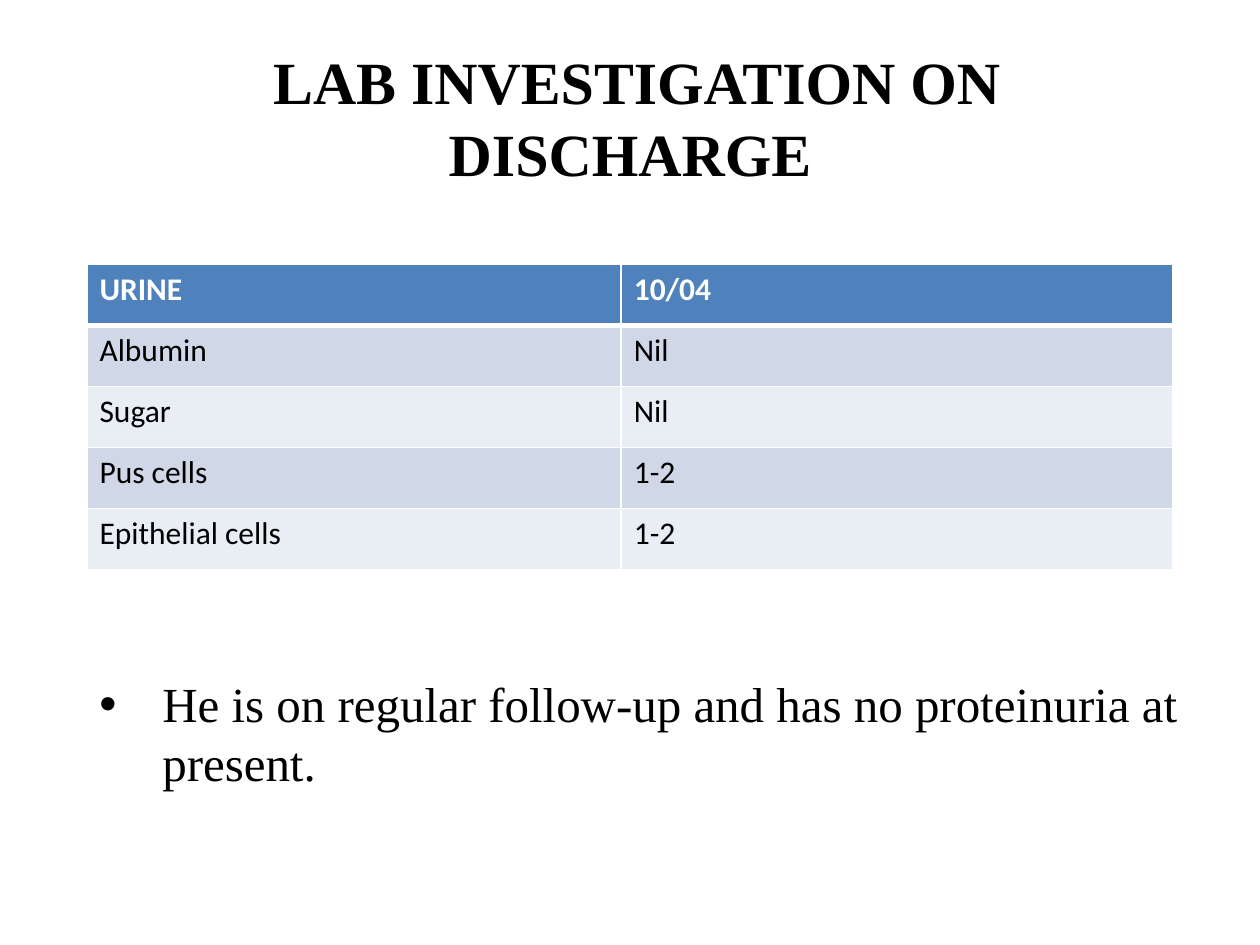
from lxml.etree import SubElement
from pptx import Presentation
from pptx.dml.color import RGBColor
from pptx.enum.text import MSO_ANCHOR as Anchor, PP_ALIGN as Align
from pptx.oxml.ns import qn
from pptx.util import Pt


def color(hex_text):
    return RGBColor.from_string(hex_text)


def add_span(para, text, **format_values):
    span = para.add_run()
    span.text = text
    span.font.color.rgb = color(format_values.pop("ink", "000000"))
    for name, value in format_values.items():
        setattr(span.font, name, value)


deck = Presentation()
deck.slide_width, deck.slide_height = Pt(720), Pt(540)
page = deck.slides.add_slide(deck.slide_layouts[6])

# Title
title_box = page.shapes.add_textbox(Pt(36), Pt(21.6), Pt(648), Pt(90))
title_frame = title_box.text_frame
title_frame.word_wrap = True
title_frame.vertical_anchor = Anchor.MIDDLE
title = title_frame.paragraphs[0]
title.alignment = Align.CENTER
title_size = Pt(34.2)
add_span(title, " ", name="Calibri", size=title_size)
add_span(title, "LAB INVESTIGATION ON DISCHARGE",
         name="Times New Roman", size=title_size, bold=True)

# Urine results
results = [
    ("URINE", "10/04"),
    ("Albumin", "Nil"),
    ("Sugar", "Nil"),
    ("Pus cells", "1-2"),
    ("Epithelial cells", "1-2"),
]
column_widths = [305.3, 315.3]
row_height = 34.85
header_fill, band_fills = "4F81BD", ["E9EDF4", "D0D8E8"]
table = page.shapes.add_table(
    len(results), len(column_widths), Pt(49.7), Pt(151.2),
    Pt(sum(column_widths)), Pt(row_height * len(results))).table
for column, width in zip(table.columns, column_widths):
    column.width = Pt(width)
for row in table.rows:
    row.height = Pt(row_height)

for row_index, texts in enumerate(results):
    is_header = row_index == 0
    for column_index, text in enumerate(texts):
        cell = table.cell(row_index, column_index)
        margins = {"margin_left": 7.2, "margin_right": 7.2,
                   "margin_top": 3.6, "margin_bottom": 3.6}
        for name, value in margins.items():
            setattr(cell, name, Pt(value))
        add_span(cell.text_frame.paragraphs[0], text, name="Calibri",
                 size=Pt(18), bold=is_header,
                 ink="FFFFFF" if is_header else "000000")

        # Borders come before the fill in the cell properties
        border_widths = {"a:lnL": 1, "a:lnR": 1,
                         "a:lnT": 3 if row_index == 1 else 1,
                         "a:lnB": 3 if is_header else 1}
        properties = cell._tc.get_or_add_tcPr()
        for tag, width in border_widths.items():
            line = SubElement(properties, qn(tag), w=str(Pt(width)))
            line_fill = SubElement(line, qn("a:solidFill"))
            SubElement(line_fill, qn("a:srgbClr"), val="FFFFFF")
        cell.fill.solid()
        cell.fill.fore_color.rgb = color(
            header_fill if is_header else band_fills[row_index % 2])

# Follow-up note
note_box = page.shapes.add_textbox(Pt(49.7), Pt(381.6), Pt(631.4), Pt(74.9))
note_box.text_frame.word_wrap = True
note = note_box.text_frame.paragraphs[0]
note_properties = note._p.get_or_add_pPr()
note_properties.set("marL", str(Pt(36)))
note_properties.set("indent", str(Pt(-36)))
SubElement(note_properties, qn("a:buFont"), typeface="Arial")
SubElement(note_properties, qn("a:buChar"), char="•")
add_span(note, "He is on regular follow-up and has no proteinuria at present.",
         name="Times New Roman", size=Pt(28))

deck.save("out.pptx")
